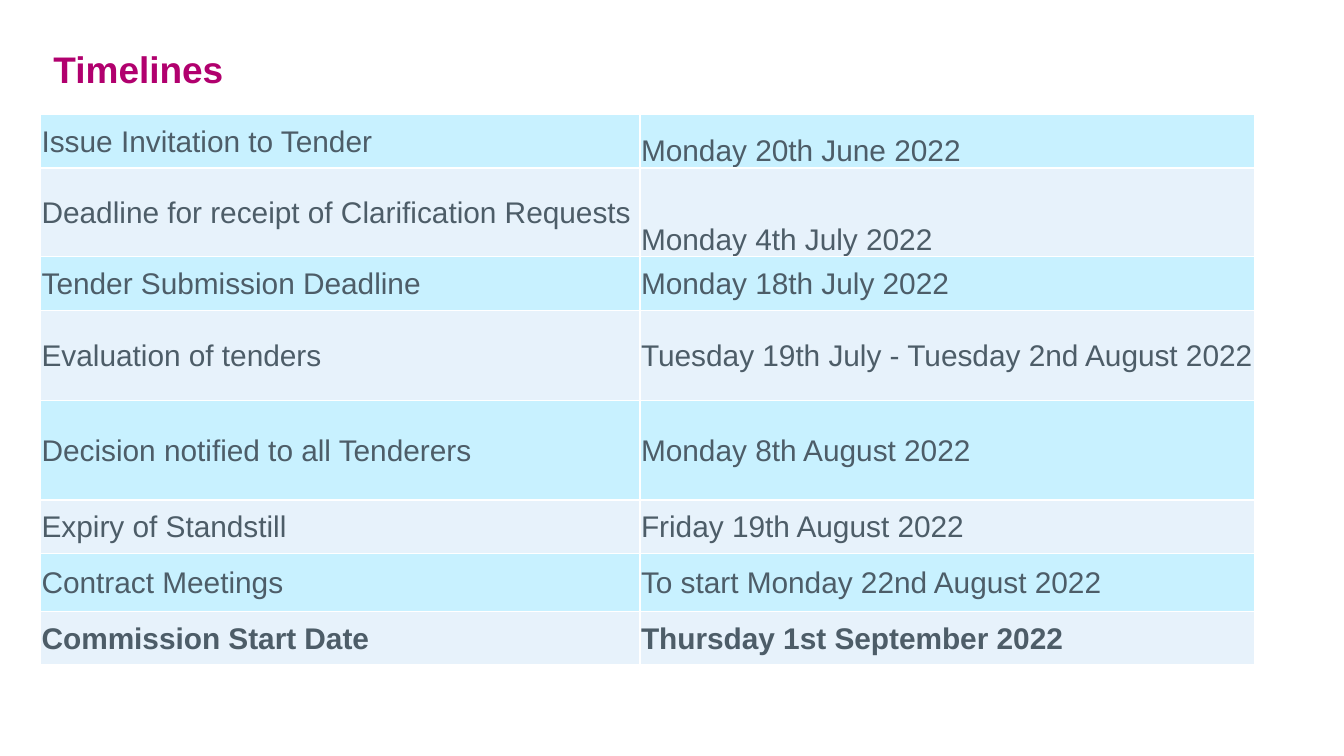
from lxml import etree
from pptx import Presentation
from pptx.dml.color import RGBColor
from pptx.enum.text import MSO_ANCHOR
from pptx.oxml.ns import qn
from pptx.util import Inches, Pt

MIDDLE, BOTTOM = MSO_ANCHOR.MIDDLE, MSO_ANCHOR.BOTTOM
MAGENTA = RGBColor(0xB1, 0x00, 0x6E)
SLATE = RGBColor(0x4D, 0x5D, 0x68)
WHITE = RGBColor(0xFF, 0xFF, 0xFF)
BANDS = (RGBColor(0xC8, 0xF1, 0xFF), RGBColor(0xE7, 0xF2, 0xFB))
FONT = "Arial"
SLIDE_WIDTH = Inches(10)
SLIDE_HEIGHT = SLIDE_WIDTH * 9 // 16
UNIT = SLIDE_WIDTH // 1000
LEFT = 30
COLUMN_UNITS = (446, 458)
MILESTONES = (
    ("Issue Invitation to Tender", "Monday 20th June 2022", 40, BOTTOM),
    ("Deadline for receipt of Clarification Requests", "Monday 4th July 2022", 66, BOTTOM),
    ("Tender Submission Deadline", "Monday 18th July 2022", 40, MIDDLE),
    ("Evaluation of tenders", "Tuesday 19th July - Tuesday 2nd August 2022", 67, MIDDLE),
    ("Decision notified to all Tenderers", "Monday 8th August 2022", 74, MIDDLE),
    ("Expiry of Standstill", "Friday 19th August 2022", 40, MIDDLE),
    ("Contract Meetings", "To start Monday 22nd August 2022", 43, MIDDLE),
    ("Commission Start Date", "Thursday 1st September 2022", 40, MIDDLE),
)


def grid(*units):
    """Turn grid units into slide lengths."""
    return [UNIT * count for count in units]


def write(text_frame, text, size, color, bold):
    """Set one formatted paragraph and return it."""
    text_frame.text = text
    para = text_frame.paragraphs[0]
    font = para.runs[0].font
    font.name, font.size, font.bold = FONT, Pt(size), bold
    font.color.rgb = color
    return para


def add_title(page, text):
    """Add the slide heading."""
    box = page.shapes.add_textbox(*grid(LEFT, 33, 927, 41))
    box.text_frame.word_wrap = True
    box.text_frame.vertical_anchor = MIDDLE
    write(box.text_frame, text, 19.8, MAGENTA, True).line_spacing = 0.9


def add_borders(cell):
    """Draw a thin white line on each side of a cell."""
    properties = cell._tc.get_or_add_tcPr()
    for position, side in enumerate(("a:lnL", "a:lnR", "a:lnT", "a:lnB")):
        line = etree.Element(qn(side), w=str(Pt(1)))
        fill = etree.SubElement(line, qn("a:solidFill"))
        etree.SubElement(fill, qn("a:srgbClr"), val=str(WHITE))
        properties.insert(position, line)


def fill_cell(cell, text, band, anchor, bold):
    """Write and style one table cell."""
    cell.margin_left = cell.margin_right = cell.margin_top = UNIT
    cell.margin_bottom = 0
    cell.vertical_anchor = anchor
    cell.fill.solid()
    cell.fill.fore_color.rgb = band
    write(cell.text_frame, text, 16, SLATE, bold)
    add_borders(cell)


def add_timeline(page):
    """Add the table of milestones and dates."""
    heights = [units for _, _, units, _ in MILESTONES]
    frame = page.shapes.add_table(
        len(MILESTONES), len(COLUMN_UNITS),
        *grid(LEFT, 85, sum(COLUMN_UNITS), sum(heights)))
    table = frame.table
    table.first_row = table.horz_banding = False
    for column, width in zip(table.columns, grid(*COLUMN_UNITS)):
        column.width = width
    for index, (milestone, date, units, date_anchor) in enumerate(MILESTONES):
        table.rows[index].height = UNIT * units
        band = BANDS[index % len(BANDS)]
        bold = index == len(MILESTONES) - 1
        fill_cell(table.cell(index, 0), milestone, band, MIDDLE, bold)
        fill_cell(table.cell(index, 1), date, band, date_anchor, bold)


def main():
    """Build and save the timelines slide."""
    deck = Presentation()
    deck.slide_width, deck.slide_height = SLIDE_WIDTH, SLIDE_HEIGHT
    page = deck.slides.add_slide(deck.slide_layouts[6])
    add_title(page, "Timelines")
    add_timeline(page)
    deck.save("out.pptx")


if __name__ == "__main__":
    main()
